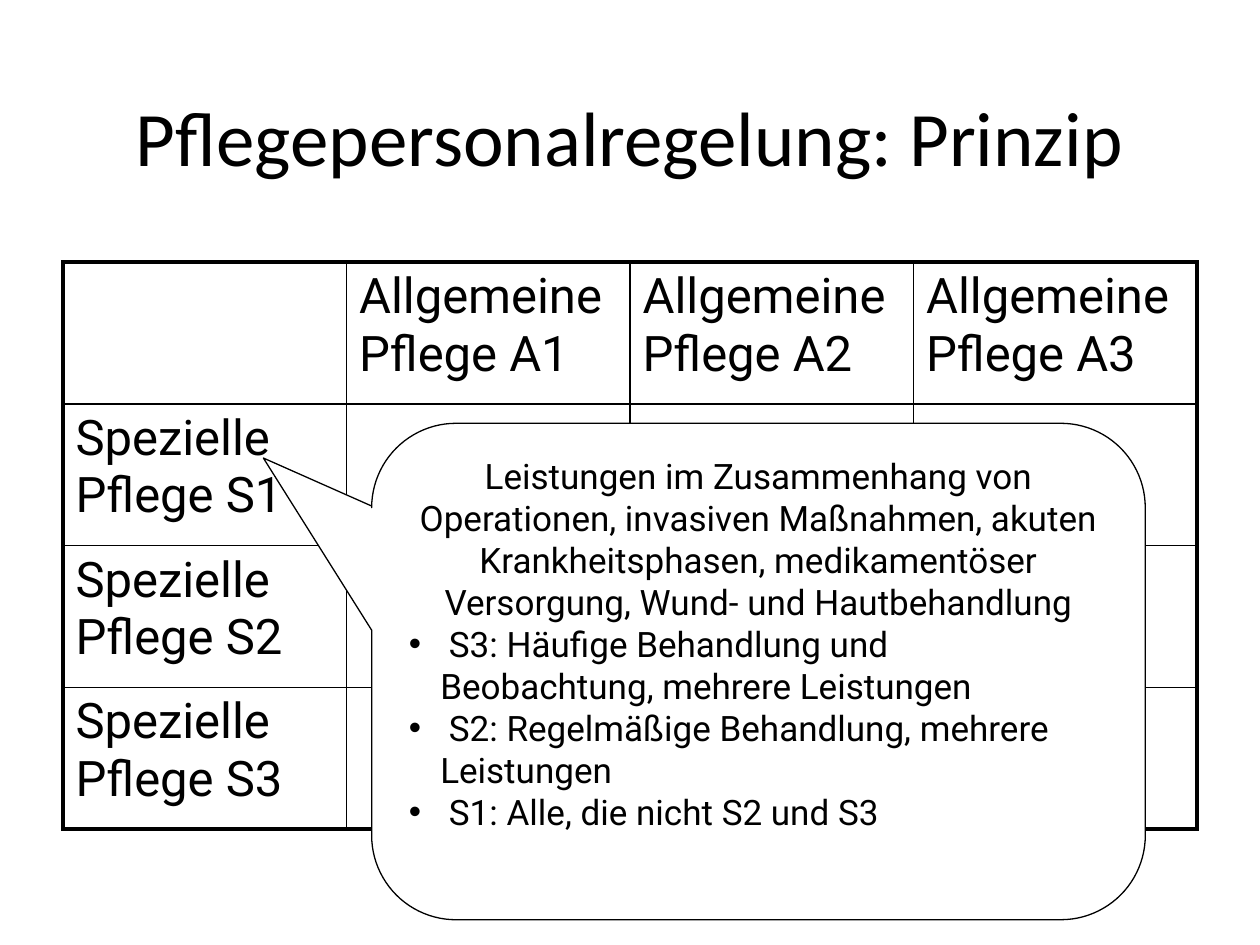
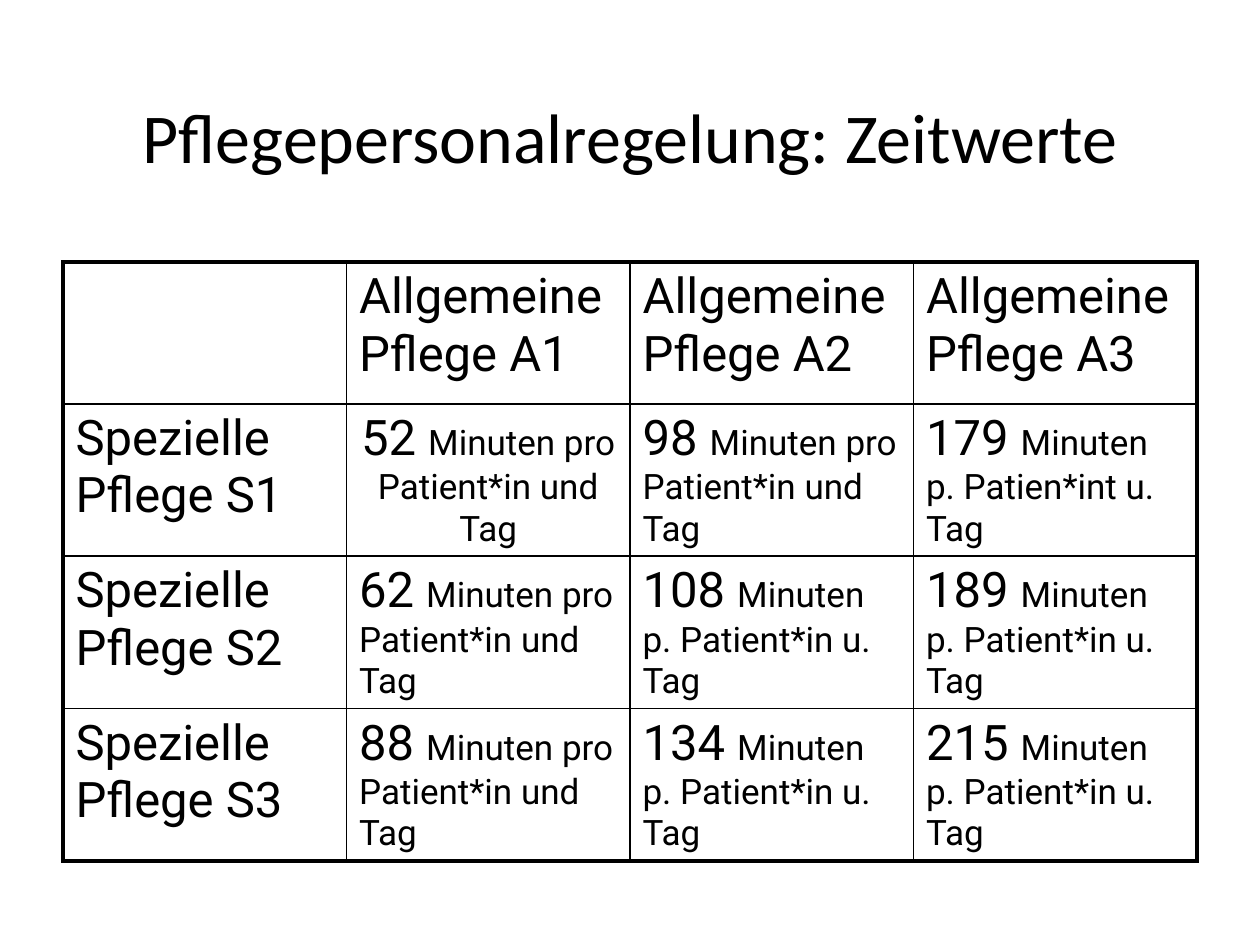
import pptx
import pptx.util
import pptx.dml.color
import pptx.enum.shapes
import pptx.enum.text
import pptx.oxml.ns
import lxml.etree

COLORS = {"ink": "000000", "paper": "FFFFFF"}
SCALE = 9144  # EMU per px, 100 px to the inch
ALIGN = pptx.enum.text.PP_ALIGN
ANCHOR = pptx.enum.text.MSO_ANCHOR
THICK, THIN = 2.25, 1


def color(name):
    return pptx.dml.color.RGBColor.from_string(COLORS[name])


def px(*sizes):
    return [size * SCALE for size in sizes]


def add_tag(parent, tag, **attrs):
    node = lxml.etree.SubElement(parent, pptx.oxml.ns.qn(tag))
    for key, value in attrs.items():
        node.set(key, str(value))
    return node


class Deck:
    head, body = "Calibri", "Roboto"
    large, small = 28, 20

    def __init__(self):
        self.file = pptx.Presentation()
        self.file.slide_width, self.file.slide_height = px(1000, 750)
        self.slide = None

    def style(self, item, size, font=None):
        item.font.name = font or self.body
        item.font.size = pptx.util.Pt(size)
        item.font.color.rgb = color("ink")

    # Slide with its title placeholder
    def start(self, title, size):
        self.slide = self.file.slides.add_slide(self.file.slide_layouts[5])
        shape = self.slide.shapes.title
        shape.left, shape.top, shape.width, shape.height = px(50, 32, 900, 151)
        frame = shape.text_frame
        frame.text = title
        frame.auto_size = pptx.enum.text.MSO_AUTO_SIZE.NONE
        frame.vertical_anchor = ANCHOR.MIDDLE
        para = frame.paragraphs[0]
        para.alignment = ALIGN.CENTER
        self.style(para, size, self.head)

    # Cell edges, heavy on the outside of the grid
    def border(self, cell, outer):
        props = cell._tc.get_or_add_tcPr()
        for side, heavy in zip("LRTB", outer):
            width = pptx.util.Pt(THICK if heavy else THIN)
            line = add_tag(props, f"a:ln{side}", w=int(width))
            fill = add_tag(line, "a:solidFill")
            add_tag(fill, "a:srgbClr", val=COLORS["ink"])

    # Cell text, with a large leading number where there is one
    def label(self, cell, text):
        para = cell.text_frame.paragraphs[0]
        if not text[:1].isdigit():
            para.text = text
            self.style(para, self.large)
            return
        number, unit = text.split(" ", 1)
        for part, size in ((number + " ", self.large), (unit, self.small)):
            run = para.add_run()
            run.text = part
            self.style(run, size)

    def grid(self, rows):
        high, wide = len(rows), len(rows[0])
        frame = self.slide.shapes.add_table(high, wide, *px(50, 208, 900, 450))
        table = frame.table
        table.first_row = table.horz_banding = False
        for r, row in enumerate(rows):
            for c, text in enumerate(row):
                cell = table.cell(r, c)
                self.border(cell, (c == 0, c == wide - 1, r == 0, r == high - 1))
                cell.fill.background()
                self.label(cell, text)
        return table

    # Speech bubble with a centred lead and a bullet list
    def bubble(self, box, tail, lead, points):
        kind = pptx.enum.shapes.MSO_SHAPE.ROUNDED_RECTANGULAR_CALLOUT
        shape = self.slide.shapes.add_shape(kind, *px(*box))
        for i, value in enumerate(tail):
            shape.adjustments[i] = value
        shape.shadow.inherit = False
        shape.fill.solid()
        shape.fill.fore_color.rgb = color("paper")
        shape.line.color.rgb = color("ink")
        shape.line.width = pptx.util.Pt(0.75)
        frame = shape.text_frame
        frame.word_wrap = True
        frame.vertical_anchor = ANCHOR.TOP
        frame.text = "\n".join([lead] + points)
        for i, para in enumerate(frame.paragraphs):
            self.style(para, self.small)
            para.alignment = ALIGN.LEFT if i else ALIGN.CENTER
            if i:
                props = para._p.get_or_add_pPr()
                indent = 25 * SCALE
                props.set("marL", str(indent))
                props.set("indent", str(-indent))
                add_tag(props, "a:buFont", typeface="Arial")
                add_tag(props, "a:buChar", char="•")
                # Bullet marks stand before the default run style
                for node in props.findall(pptx.oxml.ns.qn("a:defRPr")):
                    props.append(node)


def rows(values):
    top = [""] + [f"Allgemeine Pflege A{n}" for n in (1, 2, 3)]
    return [top] + [[f"Spezielle Pflege S{n}"] + row
                    for n, row in enumerate(values, 1)]


def main():
    deck = Deck()

    # Principle
    deck.start("Pflegepersonalregelung: Prinzip", 44)
    deck.grid(rows([[""] * 3] * 3))
    deck.bubble(
        (295, 336, 614, 394), (-0.64, -0.43, 0.17),
        "Leistungen im Zusammenhang von Operationen, invasiven Maßnahmen, "
        "akuten Krankheitsphasen, medikamentöser Versorgung, "
        "Wund- und Hautbehandlung",
        [" S3: Häufige Behandlung und Beobachtung, mehrere Leistungen",
         " S2: Regelmäßige Behandlung, mehrere Leistungen",
         " S1: Alle, die nicht S2 und S3"])

    # Time values
    deck.start("Pflegepersonalregelung: Zeitwerte", 40)
    long = "Minuten pro Patient*in und Tag"
    short = "Minuten p. Patient*in u. Tag"
    table = deck.grid(rows([
        [f"52 {long}", f"98 {long}", "179 Minuten p. Patien*int u. Tag"],
        [f"62 {long}", f"108 {short}", f"189 {short}"],
        [f"88 {long}", f"134 {short}", f"215 {short}"]]))
    table.cell(1, 1).text_frame.paragraphs[0].alignment = ALIGN.CENTER

    deck.file.save("out.pptx")


if __name__ == "__main__":
    main()
